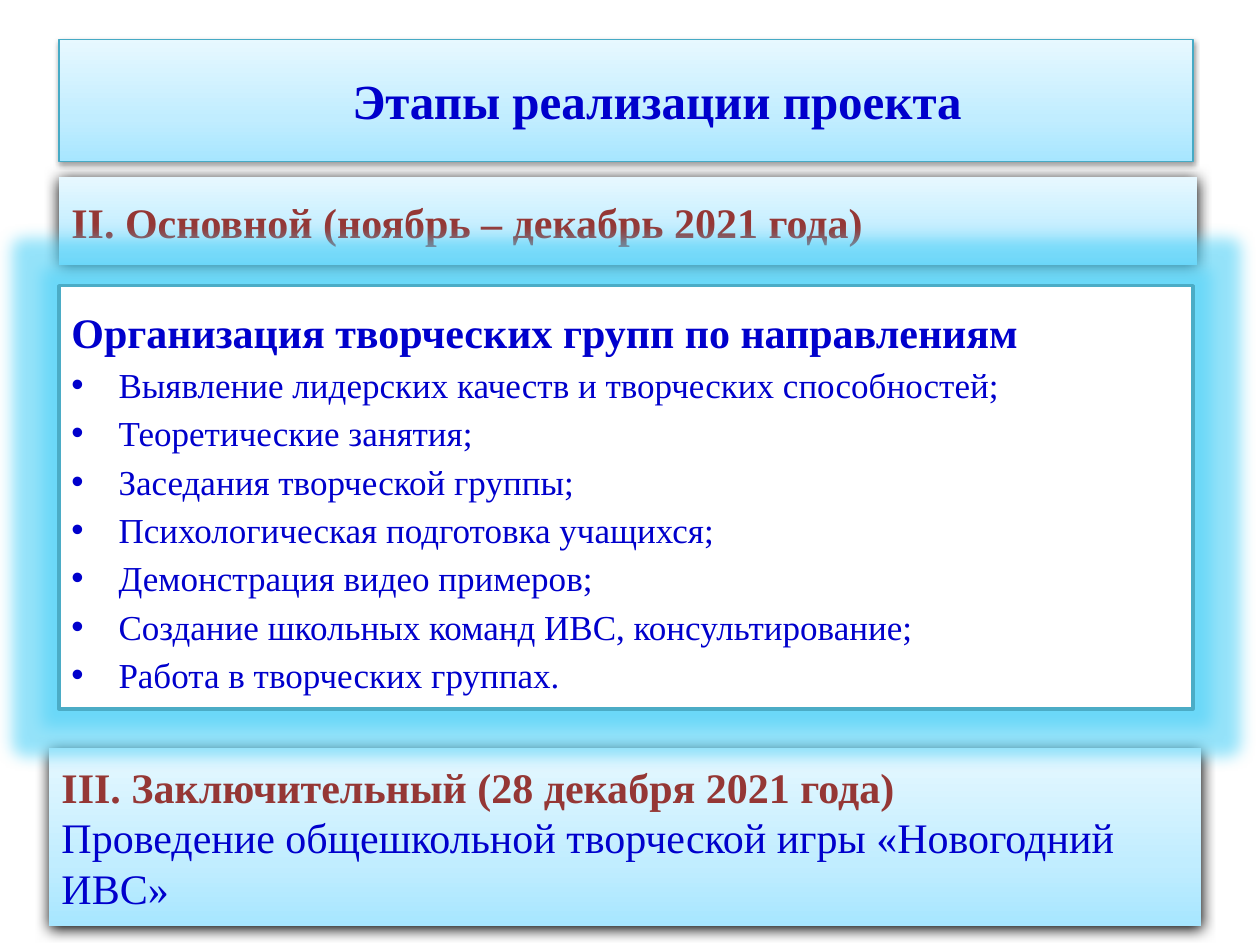
import copy

import pptx
import pptx.dml.color
import pptx.enum.shapes
import pptx.enum.text
import pptx.util
from lxml import etree
from pptx.oxml.ns import qn
from pptx.util import Cm, Pt

RGBColor = pptx.dml.color.RGBColor
Align = pptx.enum.text.PP_ALIGN

BLUE = RGBColor(0x00, 0x00, 0xCC)
BROWN = RGBColor(0x95, 0x37, 0x35)
WHITE = RGBColor(0xFF, 0xFF, 0xFF)
BLACK = RGBColor(0x00, 0x00, 0x00)
TEAL = RGBColor(0x46, 0xAA, 0xC5)
FRAME = RGBColor(0x4B, 0xAC, 0xC6)
GLOW = RGBColor(0x4F, 0xD1, 0xF7)
GRADIENT = (
    (0, RGBColor(0xA7, 0xE6, 0xFF)),
    (0.35, RGBColor(0xC1, 0xED, 0xFF)),
    (1, RGBColor(0xE7, 0xF8, 0xFF)),
)
FONT = "Times New Roman"
BULLET_INDENT = Cm(0.95)

ACTIVITIES = (
    "Выявление лидерских качеств и творческих способностей;",
    "Теоретические занятия;",
    "Заседания творческой группы;",
    "Психологическая подготовка учащихся;",
    "Демонстрация видео примеров;",
    "Создание школьных команд ИВС, консультирование;",
    "Работа в творческих группах.",
)


def place(shape, box):
    shape.left, shape.top, shape.width, shape.height = (Cm(length) for length in box)


def fill_gradient(shape):
    shape.fill.gradient()
    shape.fill.gradient_angle = 90
    stop_list = shape._element.spPr.find(qn("a:gradFill")).find(qn("a:gsLst"))
    stop_list.insert(1, copy.deepcopy(stop_list[0]))
    for stop, (position, color) in zip(shape.fill.gradient_stops, GRADIENT):
        stop.position = position
        stop.color.rgb = color


def add_effect(shape, tag, color, opacity, **attributes):
    """Give the shape one effect in place of the theme's."""
    shape.shadow.inherit = False
    effects = shape._element.spPr.find(qn("a:effectLst"))
    effect = etree.SubElement(effects, qn(tag))
    for name, value in attributes.items():
        effect.set(name, str(int(value)))
    color_element = etree.SubElement(effect, qn("a:srgbClr"), val=str(color))
    etree.SubElement(color_element, qn("a:alpha"), val=str(opacity * 1000))


def add_shadow(shape, opacity, blur, distance):
    add_effect(shape, "a:outerShdw", BLACK, opacity, blurRad=Pt(blur),
               dist=Pt(distance), dir=90 * 60000, rotWithShape=0)


def write(shape, text, size=24, color=BLUE, bold=False, align=Align.JUSTIFY,
          spacing=1, first_indent=0, bullet=False):
    """Write a paragraph after any text that the shape already holds."""
    frame = shape.text_frame
    paragraph = frame.add_paragraph() if frame.text else frame.paragraphs[0]
    paragraph.alignment = align
    paragraph.line_spacing = spacing
    paragraph.space_before = Pt(0)
    properties = paragraph._p.get_or_add_pPr()
    properties.set("marL", str(BULLET_INDENT if bullet else 0))
    properties.set("indent", str(-BULLET_INDENT if bullet else first_indent))
    if bullet:
        etree.SubElement(properties, qn("a:buFont"), typeface="Arial")
        etree.SubElement(properties, qn("a:buChar"), char="•")
    run = paragraph.add_run()
    run.text = text
    run.font.name = FONT
    run.font.size = Pt(size)
    run.font.bold = bold
    run.font.color.rgb = color


def prepare_text(shape):
    frame = shape.text_frame
    frame.word_wrap = True
    frame.auto_size = pptx.enum.text.MSO_AUTO_SIZE.NONE
    frame.vertical_anchor = pptx.enum.text.MSO_ANCHOR.MIDDLE


def add_rectangle(slide, box):
    shape = slide.shapes.add_shape(
        pptx.enum.shapes.MSO_SHAPE.RECTANGLE, 0, 0, 0, 0)
    place(shape, box)
    prepare_text(shape)
    return shape


def format_title(slide, box, text):
    title = slide.shapes.title
    place(title, box)
    prepare_text(title)
    fill_gradient(title)
    title.line.color.rgb = TEAL
    title.line.width = Pt(0.75)
    add_shadow(title, 38, 3.1, 1.6)
    write(title, text, size=28, bold=True, align=Align.CENTER, first_indent=Cm(1.25))


def add_stage(slide, box, heading, description=None):
    stage = add_rectangle(slide, box)
    fill_gradient(stage)
    stage.line.fill.background()
    add_shadow(stage, 100, 8.5, 1)
    write(stage, heading, color=BROWN, bold=True)
    if description:
        write(stage, description, align=Align.LEFT)


def add_activities(slide, box, heading, activities):
    panel = add_rectangle(slide, box)
    panel.fill.solid()
    panel.fill.fore_color.rgb = WHITE
    panel.line.color.rgb = FRAME
    panel.line.width = Pt(2)
    add_effect(panel, "a:glow", GLOW, 60, rad=Pt(18))
    write(panel, heading, bold=True, spacing=1.15)
    for activity in activities:
        write(panel, activity, size=20, spacing=1.15, bullet=True)


def main():
    presentation = pptx.Presentation()
    presentation.slide_width, presentation.slide_height = Cm(25.4), Cm(19.05)
    slide = presentation.slides.add_slide(presentation.slide_layouts[5])
    format_title(slide, (1.19, 0.79, 22.86, 2.46), "Этапы реализации проекта")
    add_stage(slide, (0.99, 15.08, 23.22, 3.58),
              "III. Заключительный (28 декабря 2021 года)",
              "Проведение общешкольной творческой игры «Новогодний ИВС»")
    add_stage(slide, (1.19, 3.57, 22.94, 1.78),
              "II. Основной (ноябрь – декабрь 2021 года)")
    add_activities(slide, (1.19, 5.76, 22.86, 8.53),
                   "Организация творческих групп по направлениям", ACTIVITIES)
    presentation.save("out.pptx")


if __name__ == "__main__":
    main()
